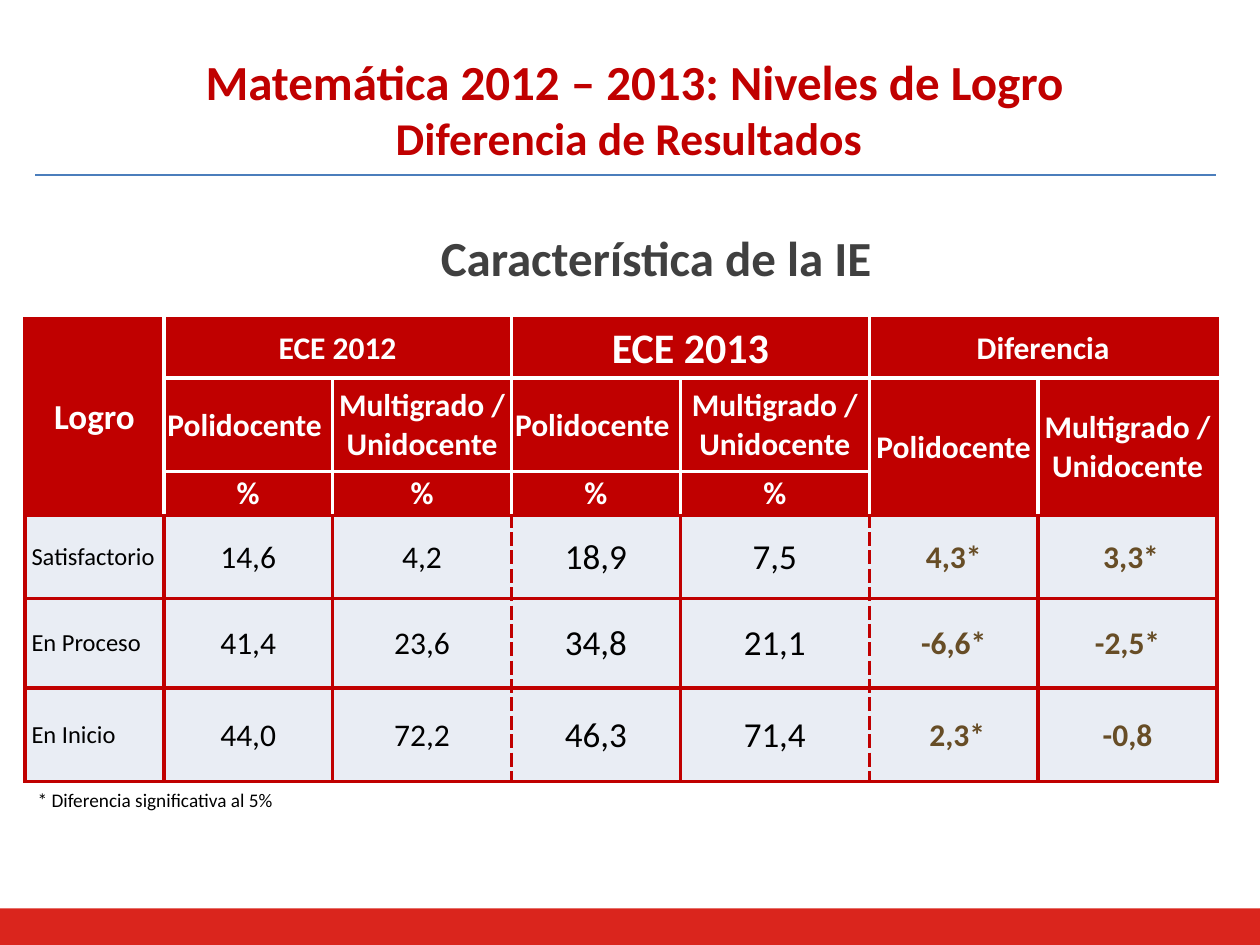
from dataclasses import dataclass
from itertools import product

from lxml import etree
from pptx import Presentation
from pptx import util as u
from pptx.dml.color import RGBColor
from pptx.enum import shapes, text
from pptx.oxml import ns

COLORS = {"red": "C00000", "bar": "DA251D", "rule": "4B7EBC", "heading": "404040",
          "white": "FFFFFF", "black": "000000", "body": "E9EDF4", "difference": "674D26"}
WIDTH, HEIGHT = u.Inches(10), u.Inches(7.5)

# Shares of the slide, in percent of its width or height
COLUMNS = (11, 13.4, 14.2, 13.4, 15, 13.4, 14.2)
ROWS = (6.27, 9.87, 4.67, 8.8, 9.47, 9.87)
HEADER_ROWS = 3
YEAR_EDGES = (3, 5)

LEVELS = (
    ("Satisfactorio", "14,6", "4,2", "18,9", "7,5", "4,3*", " 3,3*"),
    ("En Proceso", "41,4", "23,6", "34,8", "21,1", "-6,6*", "-2,5*"),
    ("En Inicio", "44,0", "72,2", "46,3", "71,4", " 2,3*", "-0,8"),
)


@dataclass(frozen=True)
class Style:
    size: float
    color: str
    bold: bool = False
    align: text.PP_ALIGN = text.PP_ALIGN.CENTER


@dataclass(frozen=True)
class Entry:
    wording: str
    row: int
    col: int
    style: Style
    rows: int = 1
    cols: int = 1


HEADER = Style(18, "white", True)
LEVEL = Style(14, "black", align=text.PP_ALIGN.LEFT)
DIFFERENCE = Style(18, "difference", True)
BODY_STYLES = (LEVEL, *[Style(18, "black")] * 2, *[Style(20, "black")] * 2, *[DIFFERENCE] * 2)


def across(percent: float) -> int:
    return round(WIDTH * percent / 100)


def down(percent: float) -> int:
    return round(HEIGHT * percent / 100)


def area(left: float, top: float, width: float, height: float) -> tuple:
    return across(left), down(top), across(width), down(height)


def rgb(name: str) -> RGBColor:
    return RGBColor.from_string(COLORS[name])


def write(paragraph, wording: str, style: Style) -> None:
    paragraph.alignment = style.align
    font = paragraph.add_run().font
    paragraph.runs[0].text = wording
    for name, value in {"name": "Calibri", "size": u.Pt(style.size), "bold": style.bold}.items():
        setattr(font, name, value)
    font.color.rgb = rgb(style.color)


def add_label(slide, box: tuple, wording: str, style: Style, wrap: bool) -> None:
    frame = slide.shapes.add_textbox(*box).text_frame
    frame.word_wrap = wrap
    frame.auto_size = text.MSO_AUTO_SIZE.SHAPE_TO_FIT_TEXT
    write(frame.paragraphs[0], wording, style)


def add_title(slide) -> None:
    title = slide.shapes.title
    title.left, title.top, title.width, title.height = area(9.8, 3.07, 81.1, 16.67)
    frame = title.text_frame
    frame.vertical_anchor = text.MSO_ANCHOR.MIDDLE
    write(frame.paragraphs[0], "Matemática 2012 – 2013: Niveles de Logro", Style(28, "red", True))
    write(frame.add_paragraph(), "Diferencia de Resultados ", Style(26, "red", True))


def add_rule(slide) -> None:
    y = down(18.53)
    rule = slide.shapes.add_connector(shapes.MSO_CONNECTOR.STRAIGHT,
                                      across(2.8), y, across(96.5), y)
    rule.line.color.rgb = rgb("rule")
    rule.line.width = u.Pt(0.75)
    etree.SubElement(rule._element.spPr, ns.qn("a:effectLst"))


def add_bottom_bar(slide) -> None:
    bar = slide.shapes.add_shape(shapes.MSO_SHAPE.RECTANGLE, *area(0, 96.13, 100, 3.87))
    bar.shadow.inherit = False
    bar.fill.solid()
    bar.fill.fore_color.rgb = rgb("bar")
    bar.line.fill.background()


def vertical_edge(row: int, edge: int) -> tuple[str, str]:
    if row < HEADER_ROWS:
        return ("red" if edge in (0, len(COLUMNS)) else "white"), "solid"
    return "red", "sysDash" if edge in YEAR_EDGES else "solid"


def horizontal_edge(edge: int) -> tuple[str, str]:
    return ("white" if 0 < edge < HEADER_ROWS else "red"), "solid"


def add_borders(cell, entry: Entry) -> None:
    edges = {
        "lnL": vertical_edge(entry.row, entry.col),
        "lnR": vertical_edge(entry.row, entry.col + entry.cols),
        "lnT": horizontal_edge(entry.row),
        "lnB": horizontal_edge(entry.row + entry.rows),
    }
    properties = cell._tc.get_or_add_tcPr()
    for tag, (color, dash) in edges.items():
        line = etree.SubElement(properties, ns.qn(f"a:{tag}"), w=str(u.Pt(2.25)))
        fill = etree.SubElement(line, ns.qn("a:solidFill"))
        etree.SubElement(fill, ns.qn("a:srgbClr"), val=COLORS[color])
        etree.SubElement(line, ns.qn("a:prstDash"), val=dash)


def fill_entry(table, entry: Entry) -> None:
    """Format every cell the entry covers, merge them and write the wording."""
    last_row, last_col = entry.row + entry.rows, entry.col + entry.cols
    for row, col in product(range(entry.row, last_row), range(entry.col, last_col)):
        cell = table.cell(row, col)
        add_borders(cell, entry)
        cell.fill.solid()
        cell.fill.fore_color.rgb = rgb("red" if row < HEADER_ROWS else "body")
    origin = table.cell(entry.row, entry.col)
    if entry.rows * entry.cols > 1:
        origin.merge(table.cell(last_row - 1, last_col - 1))
    side, top = (0.05, 0) if entry.style is LEVEL else (0.01, 0.01)
    layout = {"margin_left": u.Inches(side), "margin_right": u.Inches(side),
              "margin_top": u.Inches(top), "margin_bottom": 0,
              "vertical_anchor": text.MSO_ANCHOR.MIDDLE}
    for name, value in layout.items():
        setattr(origin, name, value)
    write(origin.text_frame.paragraphs[0], entry.wording, entry.style)


def table_entries() -> list[Entry]:
    entries = [
        Entry("Logro", 0, 0, Style(20, "white", True), rows=3),
        Entry("ECE 2012", 0, 1, HEADER, cols=2),
        Entry("ECE 2013", 0, 3, Style(24, "white", True), cols=2),
        Entry("Diferencia", 0, 5, HEADER, cols=2),
        Entry("Polidocente", 1, 5, HEADER, rows=2),
        Entry("Multigrado / Unidocente", 1, 6, HEADER, rows=2),
    ]
    for col in (1, 3):
        entries += [Entry("Polidocente ", 1, col, HEADER),
                    Entry("Multigrado / Unidocente", 1, col + 1, HEADER)]
    entries += [Entry("%", 2, col, HEADER) for col in range(1, 5)]
    for row, level in enumerate(LEVELS, HEADER_ROWS):
        entries += [Entry(wording, row, col, style)
                    for col, (wording, style) in enumerate(zip(level, BODY_STYLES))]
    return entries


def add_results(slide) -> None:
    box = area(2, 33.73, sum(COLUMNS), sum(ROWS))
    table = slide.shapes.add_table(len(ROWS), len(COLUMNS), *box).table
    for column, share in zip(table.columns, COLUMNS):
        column.width = across(share)
    for row, share in zip(table.rows, ROWS):
        row.height = down(share)
    for entry in table_entries():
        fill_entry(table, entry)


def main() -> None:
    deck = Presentation()
    deck.slide_width, deck.slide_height = WIDTH, HEIGHT
    slide = deck.slides.add_slide(deck.slide_layouts[5])
    add_bottom_bar(slide)
    add_title(slide)
    add_rule(slide)
    add_label(slide, area(34, 23.47, 36.7, 7.6), "Característica de la IE",
              Style(28, "heading", True, text.PP_ALIGN.LEFT), wrap=False)
    add_results(slide)
    add_label(slide, area(2, 82.8, 64.9, 3.87), "* Diferencia significativa al 5%",
              Style(11, "black", align=text.PP_ALIGN.LEFT), wrap=True)
    deck.save("out.pptx")


if __name__ == "__main__":
    main()
